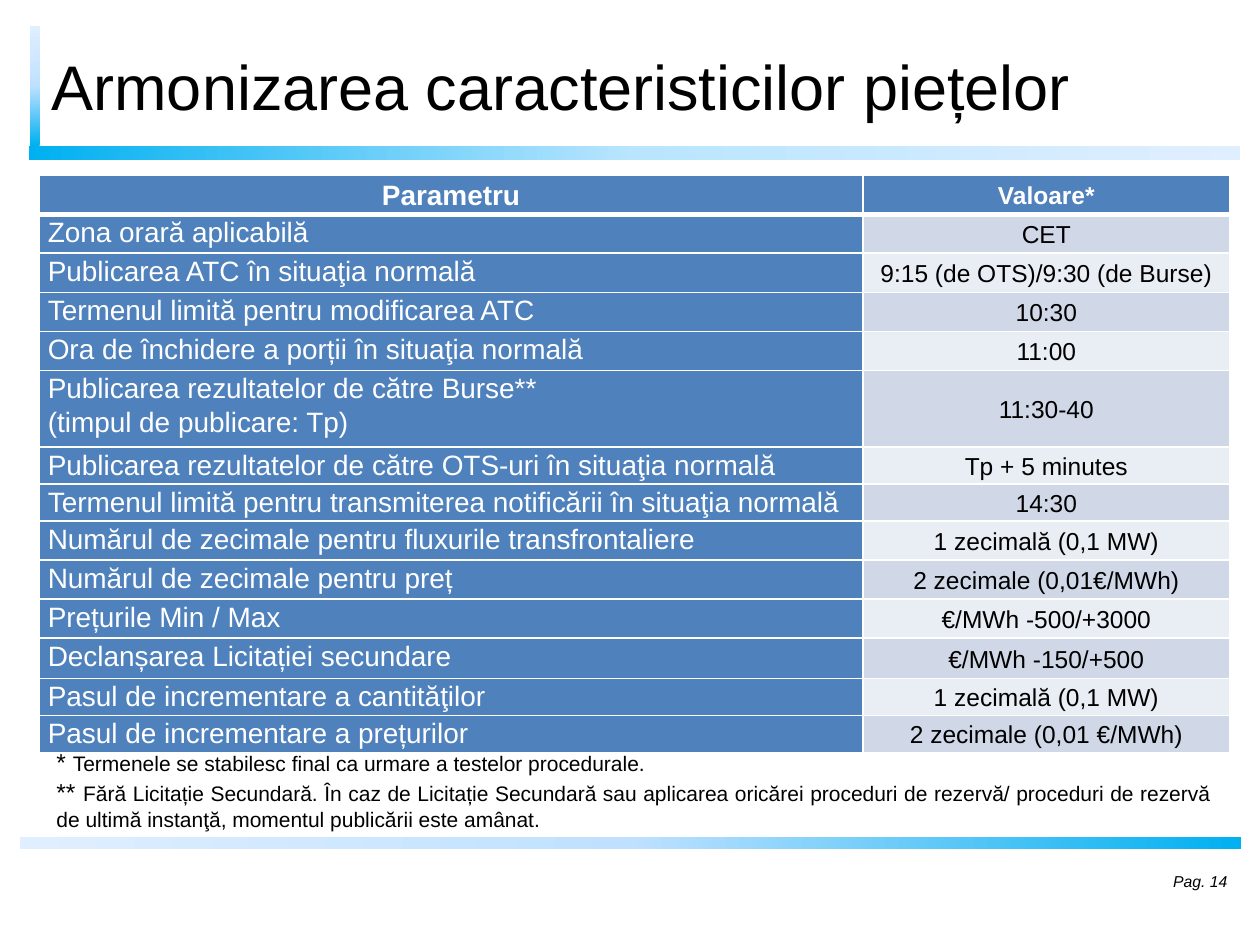
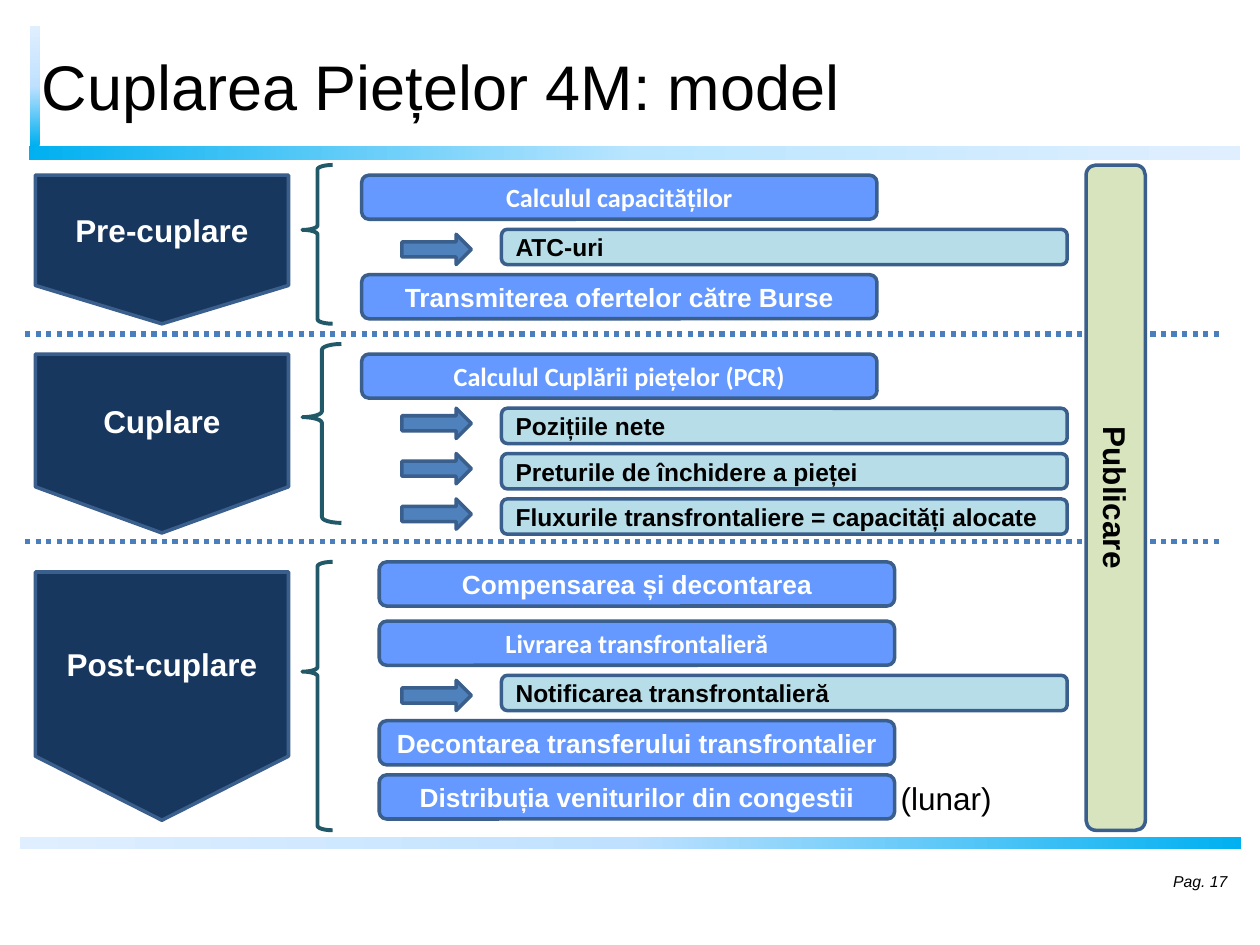
"""Build two slides on market coupling: a parameter table and a process model."""
from lxml.etree import SubElement
from pptx import Presentation
from pptx.dml.color import RGBColor
from pptx.enum.dml import MSO_LINE
from pptx.enum.shapes import MSO_CONNECTOR, MSO_SHAPE as Preset
from pptx.enum.text import MSO_ANCHOR as Anchor, MSO_AUTO_SIZE, PP_ALIGN as Align
from pptx.oxml.ns import qn
from pptx.util import Inches, Pt

WHITE, BLACK = "FFFFFF", "000000"
NAVY, BLUE, OUTLINE = "17375E", "4F81BD", "3A5F8C"
STEP_BLUE, RESULT_BLUE, PUBLISH_GREEN = "6699FF", "B7DEE8", "D7E4BD"
DOT_BLUE, BRACE_TEAL = "4B7EBC", "215968"
ROW_TINTS = ("D0D8E8", "E9EDF4")
FADE = ("00B0F0", "BFE1FF", "E0EFFF")
TITLE_FADE = ("00B0F0", "B9E5FF", "E0EFFF")

BANDS = [
    ((0.23, 1.16, 9.61, 0.11), 0, TITLE_FADE),
    ((-0.2, 0.64, 0.95, 0.08), 270, FADE),
    ((0.16, 6.64, 9.69, 0.1), 0, FADE[::-1]),
]

HEADERS = ("Parametru", "Valoare*")
COLUMN_WIDTHS = (6.54, 2.91)
PARAMETERS = [
    ("Zona orară aplicabilă", "CET", 0.31),
    ("Publicarea ATC în situaţia normală", "9:15 (de OTS)/9:30 (de Burse)", 0.31),
    ("Termenul limită pentru modificarea ATC", "10:30", 0.31),
    ("Ora de închidere a porții în situaţia normală", "11:00", 0.31),
    (["Publicarea rezultatelor de către Burse**", "(timpul de publicare: Tp)"], "11:30-40", 0.61),
    ("Publicarea rezultatelor de către OTS-uri în situaţia normală", "Tp + 5 minutes", 0.28),
    ("Termenul limită pentru transmiterea notificării în situaţia normală", "14:30", 0.28),
    ("Numărul de zecimale pentru fluxurile transfrontaliere", "1 zecimală (0,1 MW)", 0.31),
    ("Numărul de zecimale pentru preț", "2 zecimale (0,01€/MWh)", 0.31),
    ("Prețurile Min / Max", "€/MWh -500/+3000", 0.31),
    ("Declanșarea Licitației secundare", "€/MWh -150/+500", 0.32),
    ("Pasul de incrementare a cantităţilor", "1 zecimală (0,1 MW)", 0.28),
    ("Pasul de incrementare a prețurilor", "2 zecimale (0,01 €/MWh)", 0.28),
]
FOOTNOTES = [
    [("* ", 14), ("Termenele se stabilesc final ca urmare a testelor procedurale.", 12)],
    [("** ", 14), ("Fără Licitație Secundară. În caz de Licitație Secundară sau aplicarea oricărei "
                   "proceduri de rezervă/ proceduri de rezervă de ultimă instanţă, momentul "
                   "publicării este amânat.", 12)],
]

STEP, RESULT = "step", "result"
PHASES = [
    dict(name="Pre-cuplare", pointer=(1.39, 1.18), brace=(1.31, 0.24, 1.26),
         left=2.87, top=1.39, first_gap=0.08, arrow_drop=0.04, items=[
             (STEP, "Calculul capacităților", "Calibri"),
             (RESULT, "ATC-uri", "Arial"),
             (STEP, "Transmiterea ofertelor către Burse", "Arial")]),
    dict(name="Cuplare", pointer=(2.81, 1.42), brace=(2.73, 0.31, 1.42),
         left=2.87, top=2.81, first_gap=0.08, arrow_drop=0, items=[
             (STEP, "Calculul Cuplării piețelor (PCR)", "Calibri"),
             (RESULT, "Pozițiile nete", "Arial"),
             (RESULT, "Preturile de închidere a pieței", "Arial"),
             (RESULT, "Fluxurile transfrontaliere = capacități alocate", "Arial")]),
    dict(name="Post-cuplare", pointer=(4.54, 1.97), brace=(4.46, 0.24, 2.13),
         left=3.01, top=4.46, first_gap=0.12, arrow_drop=0.04, items=[
             (STEP, "Compensarea și decontarea", "Arial"),
             (STEP, "Livrarea transfrontalieră", "Calibri"),
             (RESULT, "Notificarea transfrontalieră", "Arial"),
             (STEP, "Decontarea transferului transfrontalier", "Arial"),
             (STEP, "Distribuția veniturilor din congestii", "Arial")]),
]
DIVIDERS = (2.65, 4.3)
ITEM_GAP = 0.08


def rgb(value):
    return RGBColor.from_string(value)


def inches(box):
    return [Inches(length) for length in box]


def write(frame, content, size=14, color=BLACK, font="Arial", bold=False, italic=False,
          align=Align.LEFT, anchor=Anchor.MIDDLE, spacing=None, wrap=True):
    """Fill a frame from a string or a list of paragraphs, each a string or sized runs."""
    frame.word_wrap = wrap
    frame.vertical_anchor = anchor
    paragraphs = [content] if isinstance(content, str) else content
    for index, runs in enumerate(paragraphs):
        paragraph = frame.add_paragraph() if index else frame.paragraphs[0]
        paragraph.alignment = align
        if spacing:
            paragraph.line_spacing = spacing
        for words, points in [(runs, size)] if isinstance(runs, str) else runs:
            run = paragraph.add_run()
            run.text = words
            run.font.name, run.font.size = font, Pt(points)
            run.font.bold, run.font.italic = bold, italic
            run.font.color.rgb = rgb(color)


def label(slide, box, content, **style):
    write(slide.shapes.add_textbox(*inches(box)).text_frame, content, **style)


def block(slide, preset, box, fill=None, line=OUTLINE, width=2, adjust=()):
    shape = slide.shapes.add_shape(preset, *inches(box))
    shape.shadow.inherit = False
    if fill:
        shape.fill.solid()
        shape.fill.fore_color.rgb = rgb(fill)
    else:
        shape.fill.background()
    if line:
        shape.line.color.rgb = rgb(line)
        shape.line.width = Pt(width)
    else:
        shape.line.fill.background()
    for index, value in enumerate(adjust):
        shape.adjustments[index] = value
    return shape


def move_bands_to_layout(slide):
    for number, (box, rotation, colors) in enumerate(BANDS):
        band = block(slide, Preset.RECTANGLE, box, line=None)
        band.rotation = rotation
        band.fill.gradient()
        band.fill.gradient_angle = 0
        stops = band.element.xpath(".//a:gsLst")[0]
        for stop in list(stops):
            stops.remove(stop)
        for position, color in zip((0, 50000, 100000), colors):
            stop = SubElement(stops, qn("a:gs"), pos=str(position))
            SubElement(stop, qn("a:srgbClr"), val=color)
        band.element.xpath(".//p:cNvPr")[0].set("id", str(100 + number))
        slide.slide_layout.shapes.element.append(band.element)


def start_slide(deck, title, left, page):
    slide = deck.slides.add_slide(deck.slide_layouts[5])
    heading = slide.shapes.title
    heading.left, heading.top, heading.width, heading.height = inches((left, 0.21, 9.61, 0.94))
    heading.text_frame.auto_size = MSO_AUTO_SIZE.NONE
    write(heading.text_frame, title, size=36)
    label(slide, (8.75, 6.79, 1.09, 0.4), f"Pag. {page}", size=9, italic=True, align=Align.RIGHT)
    return slide


def format_cell(cell, fill, bottom=1):
    cell.margin_left = cell.margin_right = Inches(0.07)
    cell.margin_top = cell.margin_bottom = 0
    properties = cell._tc.get_or_add_tcPr()
    for side, points in (("L", 1), ("R", 1), ("T", 1), ("B", bottom)):
        border = SubElement(properties, qn(f"a:ln{side}"), w=str(Pt(points)))
        SubElement(SubElement(border, qn("a:solidFill")), qn("a:srgbClr"), val=WHITE)
    cell.fill.solid()
    cell.fill.fore_color.rgb = rgb(fill)


def write_cell(cell, content, **style):
    write(cell.text_frame, content, spacing=1.1, **style)
    cell.vertical_anchor = style.get("anchor", Anchor.MIDDLE)


def add_parameters(slide):
    heights = [0.31] + [height for *_, height in PARAMETERS]
    box = (0.31, 1.39, sum(COLUMN_WIDTHS), sum(heights))
    table = slide.shapes.add_table(len(heights), len(COLUMN_WIDTHS), *inches(box)).table
    for column, width in zip(table.columns, COLUMN_WIDTHS):
        column.width = Inches(width)
    for row, height in zip(table.rows, heights):
        row.height = Inches(height)
    for column, (header, size) in enumerate(zip(HEADERS, (16, 14))):
        cell = table.cell(0, column)
        format_cell(cell, BLUE, bottom=3)
        write_cell(cell, header, size=size, color=WHITE, bold=True, align=Align.CENTER)
    for row, (parameter, value, _) in enumerate(PARAMETERS, 1):
        name_cell, value_cell = table.cell(row, 0), table.cell(row, 1)
        format_cell(name_cell, BLUE)
        write_cell(name_cell, parameter, size=16, color=WHITE, align=Align.JUSTIFY,
                   anchor=Anchor.TOP)
        format_cell(value_cell, ROW_TINTS[(row - 1) % 2])
        write_cell(value_cell, value, align=Align.CENTER)


def add_divider(slide, y):
    divider = slide.shapes.add_connector(MSO_CONNECTOR.STRAIGHT, *inches((0.2, y, 9.68, y)))
    divider.line.color.rgb = rgb(DOT_BLUE)
    divider.line.width = Pt(3)
    divider.line.dash_style = MSO_LINE.ROUND_DOT
    SubElement(divider.element.spPr, qn("a:effectLst"))


def add_phase(slide, phase):
    top, height = phase["pointer"]
    pointer = block(slide, Preset.DOWN_ARROW, (0.28, top, 2.01, height), NAVY, adjust=(1, 0.258))
    write(pointer.text_frame, phase["name"], size=18, color=WHITE, bold=True, align=Align.CENTER)
    brace_top, brace_width, brace_height = phase["brace"]
    block(slide, Preset.LEFT_BRACE, (2.4, brace_top, brace_width, brace_height),
          line=BRACE_TEAL, width=2.25, adjust=(0.149, 0.409))
    y = phase["top"]
    for index, (kind, words, font) in enumerate(phase["items"]):
        if kind == STEP:
            height = 0.35
            step = block(slide, Preset.ROUNDED_RECTANGLE, (phase["left"], y, 4.09, height), STEP_BLUE)
            write(step.text_frame, words, size=15, color=WHITE, font=font, bold=True,
                  align=Align.CENTER)
        else:
            height = 0.28
            result = block(slide, Preset.ROUNDED_RECTANGLE, (3.98, y, 4.49, height), RESULT_BLUE)
            write(result.text_frame, words, font=font, bold=True)
            block(slide, Preset.RIGHT_ARROW, (3.19, y + phase["arrow_drop"], 0.55, 0.24), BLUE)
        y += height + (ITEM_GAP if index else phase["first_gap"])


def add_model(slide):
    for y in DIVIDERS:
        add_divider(slide, y)
    for phase in PHASES:
        add_phase(slide, phase)
    publishing = block(slide, Preset.ROUNDED_RECTANGLE, (8.62, 1.31, 0.47, 5.28), PUBLISH_GREEN)
    write(publishing.text_frame, "Publicare", size=18, bold=True, align=Align.CENTER)
    publishing.element.xpath(".//a:bodyPr")[0].set("vert", "vert")
    label(slide, (7.05, 6.13, 0.93, 0.4), "(lunar)", size=18, anchor=Anchor.TOP, wrap=False)


def main():
    deck = Presentation()
    deck.slide_width, deck.slide_height = Inches(10), Inches(7.5)
    parameters = start_slide(deck, "Armonizarea caracteristicilor piețelor", 0.31, 14)
    move_bands_to_layout(parameters)
    add_parameters(parameters)
    label(parameters, (0.35, 5.88, 9.37, 0.77), FOOTNOTES, align=Align.JUSTIFY)
    add_model(start_slide(deck, "Cuplarea Piețelor 4M: model", 0.23, 17))
    deck.save("out.pptx")


if __name__ == "__main__":
    main()
